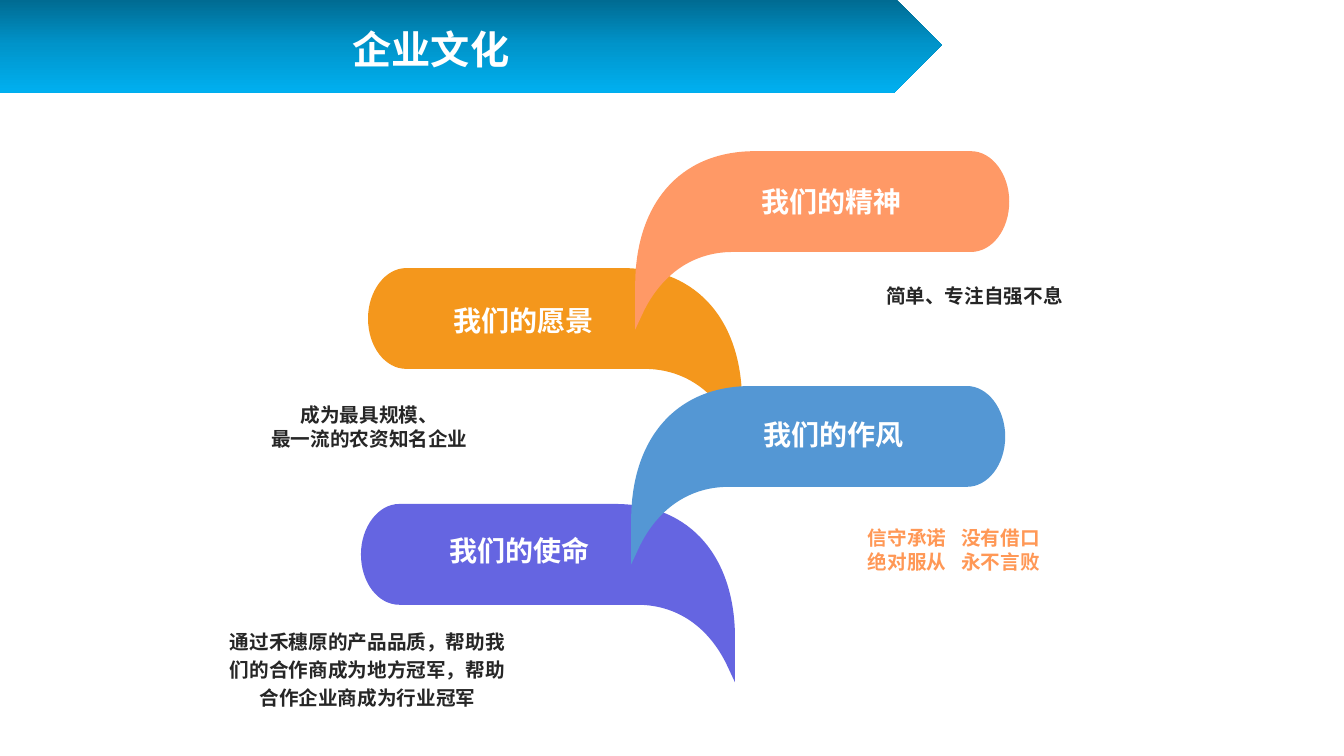
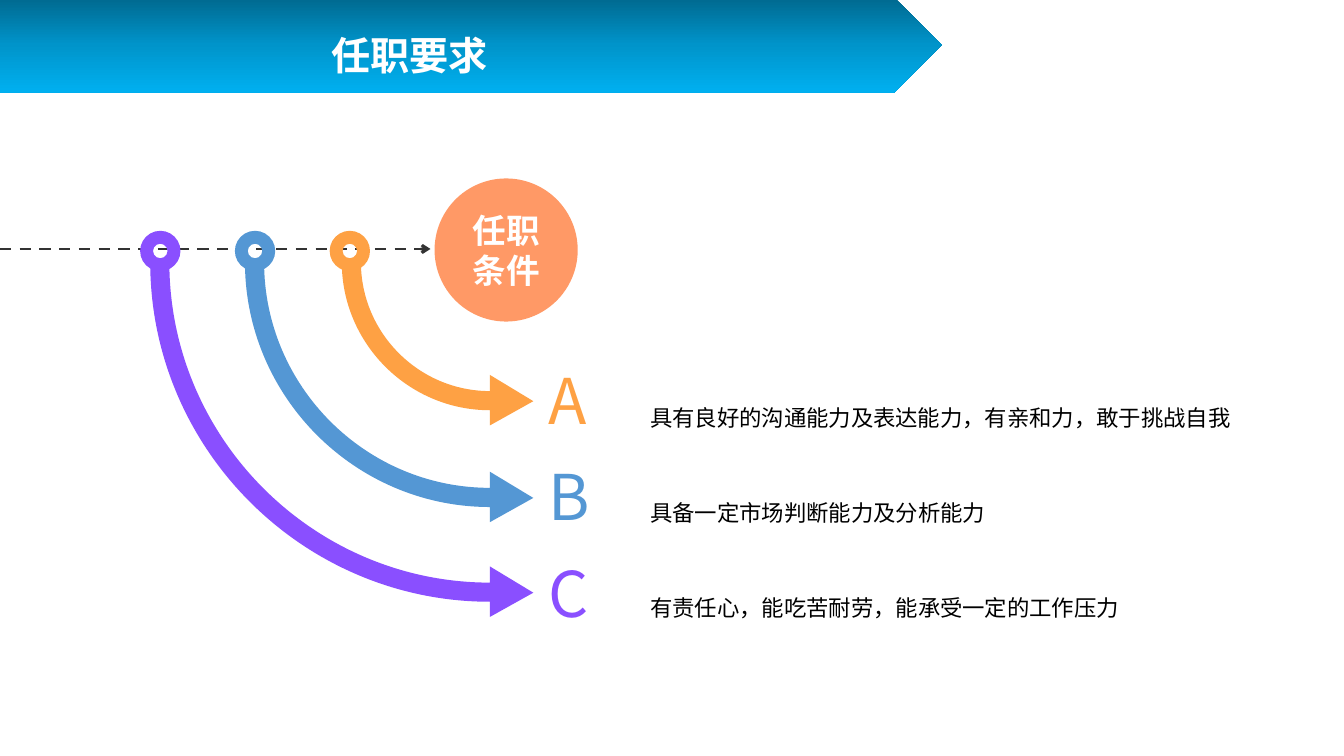
from copy import deepcopy

from pptx import Presentation
from pptx.dml.color import RGBColor
from pptx.enum.dml import MSO_LINE
from pptx.enum.lang import MSO_LANGUAGE_ID
from pptx.enum.shapes import MSO_CONNECTOR, MSO_SHAPE
from pptx.enum.text import MSO_ANCHOR, PP_ALIGN
from pptx.oxml.ns import qn
from pptx.util import Pt
from lxml import etree

PX = 9144  # 100 px to the inch
WIDE, HIGH = 1333, 750

PLATE, RECT = MSO_SHAPE.PENTAGON, MSO_SHAPE.RECTANGLE
OVAL, DONUT = MSO_SHAPE.OVAL, MSO_SHAPE.DONUT
STRAIGHT, DASH = MSO_CONNECTOR.STRAIGHT, MSO_LINE.DASH
LEFT, CENTER = PP_ALIGN.LEFT, PP_ALIGN.CENTER
TOP, MIDDLE = MSO_ANCHOR.TOP, MSO_ANCHOR.MIDDLE
CHINESE = MSO_LANGUAGE_ID.SIMPLIFIED_CHINESE

WHITE = RGBColor(0xFF, 0xFF, 0xFF)
BLACK = RGBColor(0, 0, 0)
INK = RGBColor(0x26, 0x26, 0x26)
GRAY = RGBColor(0x33, 0x33, 0x33)
CORAL = RGBColor(0xFF, 0x99, 0x66)
PEACH = RGBColor(0xFF, 0x98, 0x56)
AMBER = RGBColor(0xF4, 0x97, 0x1C)
ORANGE = RGBColor(0xFE, 0xA1, 0x44)
BLUE = RGBColor(0x54, 0x97, 0xD4)
INDIGO = RGBColor(0x65, 0x65, 0xE1)
VIOLET = RGBColor(0x8A, 0x4F, 0xFF)
BAND = [(0, RGBColor(0, 0x68, 0x8E)), (0.5, RGBColor(0, 0x94, 0xCA)),
        (1, RGBColor(0, 0xB0, 0xF0))]

SANS = "Noto Sans CJK SC"
EAST = "Calibri"
TITLE = dict(name=SANS, size=Pt(28), bold=True)
LABEL = dict(name=SANS, size=Pt(20), bold=True)
HUB = dict(name=SANS, size=Pt(24), bold=True)
NOTE = dict(name="Open Sans", size=Pt(14), bold=True)
MARK = dict(name=SANS, size=Pt(45), bold=False)
BODY = dict(name="Calibri", size=Pt(16), bold=False)

SNUG = (8, 4)
GAP = 730  # extra width of a space, in hundredths of a point
BEND = 0.55  # handle length of a quarter circle with radius 1


def emu(*nums):
    return [round(num * PX) for num in nums]


def add_run(para, text, style, color):
    run = para.add_run()
    run.text = text
    for key, value in dict(style, language_id=CHINESE).items():
        setattr(run.font, key, value)
    run.font.color.rgb = color
    props = run.font._element
    etree.SubElement(props, qn("a:ea")).set("typeface", EAST)
    if text == " ":
        props.set("spc", str(GAP))


def write(shape, text, style, color, align=LEFT, space=None, wrap=True,
          anchor=TOP, pad=(10, 5), tail=0):
    """Fill a shape with one paragraph a line; tail indents the first at right."""
    frame = shape.text_frame
    side, edge = emu(*pad)
    form = dict(word_wrap=wrap, vertical_anchor=anchor, margin_left=side,
                margin_right=side, margin_top=edge, margin_bottom=edge)
    for key, value in form.items():
        setattr(frame, key, value)
    for num, line in enumerate(text.split("\n")):
        para = frame.add_paragraph() if num else frame.paragraphs[0]
        para.alignment = align
        if space:
            para.line_spacing = space
        if tail and not num:
            para._p.get_or_add_pPr().set("marR", str(tail * PX))
        for piece in filter(None, line.partition(" ")):
            add_run(para, piece, style, color)


def label(slide, box, text, style, color, **form):
    write(slide.shapes.add_textbox(*emu(*box)), text, style, color, **form)


def paint(shape, color):
    shape.shadow.inherit = False
    shape.fill.solid()
    shape.fill.fore_color.rgb = color
    shape.line.fill.background()


def preset(slide, kind, box, color):
    shape = slide.shapes.add_shape(kind, *emu(*box))
    paint(shape, color)
    return shape


def outline(slide, start, moves, color):
    """Closed outline; a move has one point for a line, three for a curve."""
    maker = slide.shapes.build_freeform(*emu(*start))
    maker.add_line_segments([emu(*point) for move in moves for point in move])
    shape = maker.convert_to_shape()
    paint(shape, color)
    lines = iter(list(shape.element.iter(qn("a:lnTo"))))
    for move in moves:
        steps = [next(lines) for _ in move]
        if len(steps) == 3:
            bend = etree.Element(qn("a:cubicBezTo"))
            steps[0].addprevious(bend)
            for step in steps:
                bend.append(step[0])
                step.getparent().remove(step)


def header(slide, text, left, top):
    band = preset(slide, PLATE, (0, -3, 934, 95), WHITE)
    band.fill.gradient()
    band.fill.gradient_angle = 270
    stops = band.element.spPr.find(qn("a:gradFill")).find(qn("a:gsLst"))
    stops.insert(1, deepcopy(stops[0]))
    for stop, (place, color) in zip(band.fill.gradient_stops, BAND):
        stop.position = place
        stop.color.rgb = color
    label(slide, (left, top, 177, 72), text, TITLE, WHITE, space=1.5, wrap=False)


LEAF_W = 371
LEAF_START = (333, 100)
LEAF = [
    [(97, 100)],
    [(53, 100), (23, 127), (7, 162)],
    [(0, 177)],
    [(0, 133)],
    [(0, 55), (42, 0), (119, 0)],
    [(333, 0)],
    [(354, 0), (371, 23), (371, 50)],
    [(371, 78), (354, 100), (333, 100)],
]


def leaf(slide, left, top, flip, color, text, dx, dy, width):
    """A leaf with its tip at the left, or at the right when flipped."""
    def put(point):
        x, y = point
        return left + (LEAF_W - x if flip else x), top + y

    outline(slide, put(LEAF_START), [[put(p) for p in move] for move in LEAF], color)
    plate = preset(slide, RECT, (left + dx, top + dy, width, 44), color)
    write(plate, text, LABEL, WHITE)


def culture(slide):
    header(slide, "企业文化", 340, -3)
    for item in (
        (365, 266, True, AMBER, "我们的愿景", 75, 30, 221),
        (358, 500, True, INDIGO, "我们的使命", 78, 24, 221),
        (630, 150, False, CORAL, "我们的精神", 115, 28, 250),
        (626, 383, False, BLUE, "我们的作风", 121, 26, 221),
    ):
        leaf(slide, *item)
    for box, text, color, form in (
        ((212, 615, 305, 92),
         "通过禾穗原的产品品质，帮助我们的合作商成为地方冠军，帮助合作企业商成为行业冠军",
         INK, dict(space=1.2)),
        ((800, 517, 307, 57), "信守承诺 没有借口\n绝对服从 永不言败",
         PEACH, dict(tail=15)),
        ((216, 395, 301, 57), "成为最具规模、\n最一流的农资知名企业", INK, {}),
        ((817, 277, 299, 34), "简单、专注自强不息", INK, {}),
    ):
        label(slide, box, text, NOTE, color, align=CENTER, **form)


def axis(slide, right, y):
    line = slide.shapes.add_connector(STRAIGHT, *emu(0, y, right, y))
    line.line.color.rgb = GRAY
    line.line.width = Pt(0)
    line.line.dash_style = DASH
    pen = line.line._get_or_add_ln()
    etree.SubElement(pen, qn("a:tailEnd")).set("type", "arrow")
    etree.SubElement(line.element.spPr, qn("a:effectLst"))


def arc(x, y, radius):
    """Four points of a quarter circle, from its foot up to its left end."""
    grip = radius * BEND
    return [(x, y + radius), (x - grip, y + radius),
            (x - radius, y + grip), (x - radius, y)]


def sweep(slide, x, y, reach, color):
    """A bent arrow that turns about the centre x, y."""
    foot = y + reach
    outer, inner = arc(x, y, reach + 9), arc(x, y, reach - 10)[::-1]
    head = [[(x, foot - 26)], [(x + 43, foot)], [(x, foot + 24)]]
    outline(slide, outer[0], [outer[1:], inner[:1], inner[1:], *head], color)


def duties(slide):
    header(slide, "任职要求", 319, 3)
    hub = preset(slide, OVAL, (431, 177, 142, 142), CORAL)
    write(hub, "任职条件", HUB, WHITE, align=CENTER, anchor=MIDDLE, pad=SNUG)
    axis(slide, 427, 247)
    for num, (mark, top, reach, color, text) in enumerate((
        ("A", 354, 138, ORANGE, "具有良好的沟通能力及表达能力，有亲和力，敢于挑战自我"),
        ("B", 449, 234, BLUE, "具备一定市场判断能力及分析能力"),
        ("C", 546, 328, VIOLET, "有责任心，能吃苦耐劳，能承受一定的工作压力"),
    )):
        ring = preset(slide, DONUT, (327 - 94 * num, 229, 40, 40), color)
        ring.adjustments[0] = 0.32
        sweep(slide, 486, 260, reach, color)
        label(slide, (536, top, 60, 84), mark, MARK, color,
              wrap=False, anchor=MIDDLE, pad=SNUG)
        label(slide, (635, 391 + 94 * num, 614 if num == 0 else 488, 42),
              text, BODY, BLACK, space=1.2)


def main():
    deck = Presentation()
    deck.slide_width, deck.slide_height = emu(WIDE, HIGH)
    for build in (culture, duties):
        build(deck.slides.add_slide(deck.slide_layouts[6]))
    deck.save("out.pptx")


if __name__ == "__main__":
    main()
